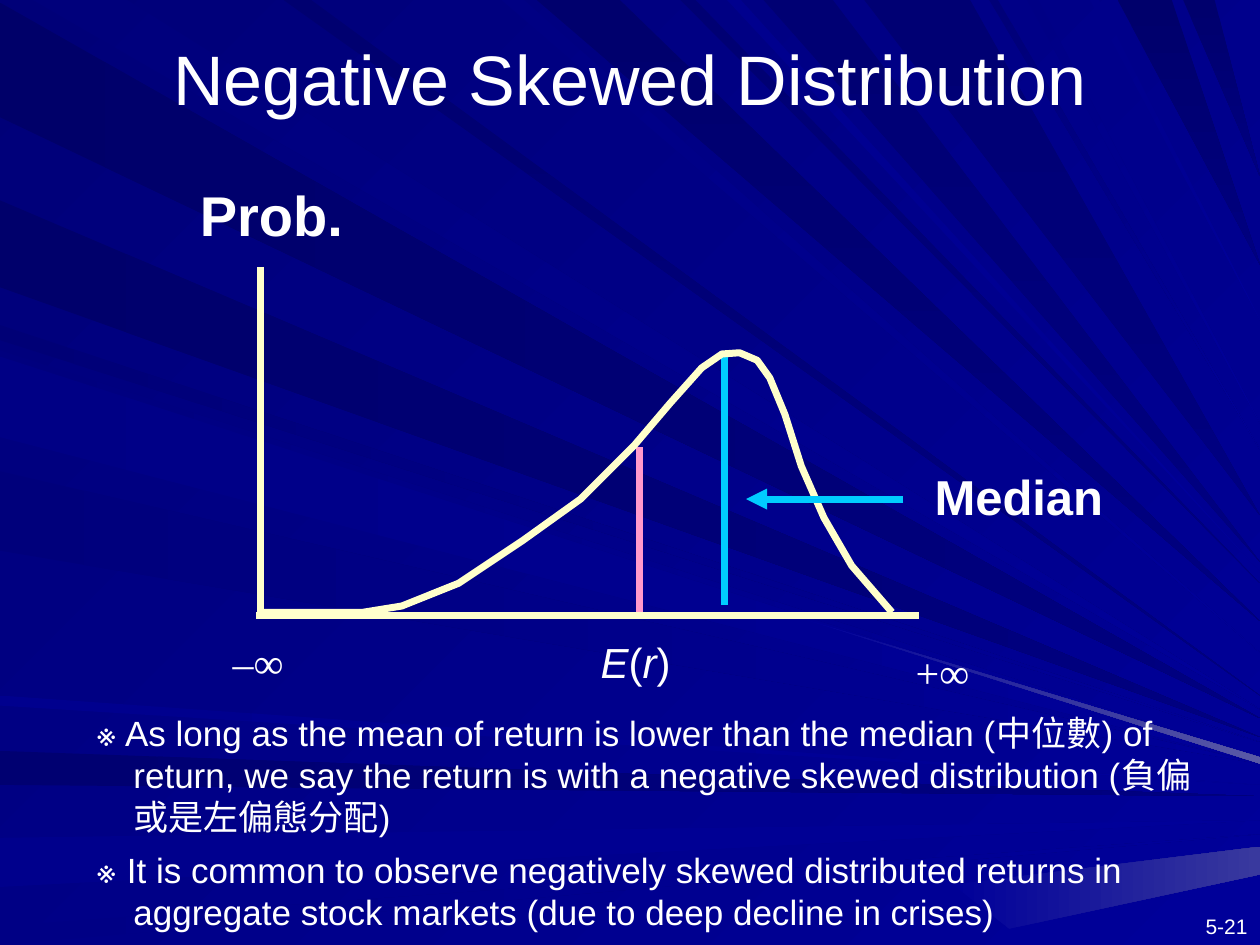
"""Build a slide that explains a negatively skewed return distribution."""
from lxml.etree import SubElement
from pptx import Presentation
from pptx.dml.color import RGBColor
from pptx.enum.shapes import MSO_CONNECTOR
from pptx.enum.text import MSO_ANCHOR, MSO_AUTO_SIZE, PP_ALIGN
from pptx.oxml.ns import qn
from pptx.util import Cm, Pt

WHITE = RGBColor(0xFF, 0xFF, 0xFF)
CREAM = RGBColor(0xFF, 0xFF, 0xCC)
CYAN = RGBColor(0x00, 0xCC, 0xFF)
PINK = RGBColor(0xFF, 0x99, 0xCC)
NIGHT = RGBColor(0x00, 0x00, 0x78)
BLUE = RGBColor(0x00, 0x00, 0x99)
NAVY = RGBColor(0x00, 0x00, 0x80)
GLOW = RGBColor(0x5A, 0x5A, 0xA6)
HAZE = RGBColor(0x39, 0x39, 0x9E)
UNIT = Cm(0.0254)
RIGHT_EDGE = 1000

LEFT_RAYS = [
    (2, 93, 570, "69"), (596, 623, 632, "71"), (665, 704, 651, "8C"),
    (735, 750, 662, "85"), (258, 270, 589, "76"), (159, 228, 585, "6B"),
    (278, 342, 602, "7E"), (374, 437, 606, "7B"), (552, 560, 623, "8E"),
    (283, 347, 606, "85"),
]
TOP_RAYS = [
    (26, 101, 563, "7B"), (398, 416, 518, "83"), (426, 492, 493, "6D"),
    (540, 552, 463, "73"), (606, 661, 446, "73"), (887, 930, 210, "6B"),
    (939, 964, 140, "6D"), (225, 247, 552, "70"), (577, 588, 454, "8E"),
    (686, 770, 409, "73"), (785, 792, 357, "78"), (815, 824, 336, "85"),
    (865, 872, 254, "8A"),
]
CURVE = [
    (708, 486), (676, 449), (654, 411), (636, 370), (623, 329), (611, 300),
    (601, 286), (587, 280), (573, 281), (557, 292), (532, 320), (503, 354),
    (461, 396), (415, 429), (364, 463), (319, 481), (288, 486), (208, 486),
]


def draw_outline(points, close):
    builder = page.shapes.build_freeform(*points[0], scale=UNIT)
    builder.add_line_segments(points[1:], close=close)
    shape = builder.convert_to_shape()
    shape.shadow.inherit = False
    return shape


def draw_line(color, *ends):
    line = page.shapes.add_connector(MSO_CONNECTOR.STRAIGHT, *[Cm(end) for end in ends])
    line.line.color.rgb = color
    line.line.width = Pt(4)
    SubElement(line._element.spPr, qn("a:effectLst"))
    return line


deck = Presentation()
deck.slide_width, deck.slide_height = Cm(25.4), Cm(19.05)
page = deck.slides.add_slide(deck.slide_layouts[5])
backdrop = page.background.fill
backdrop.gradient()
backdrop.gradient_angle = 315
for stop, color in zip(backdrop.gradient_stops, (NIGHT, BLUE)):
    stop.color.rgb = color

rays = []
for side, group in (("left", LEFT_RAYS), ("top", TOP_RAYS)):
    for start, end, tip, shade in group:
        corners = [(0, start), (0, end)] if side == "left" else [(start, 0), (end, 0)]
        dark = shade < "74"
        angle = 0 if side == "left" else 270 if dark else 315
        first = RGBColor.from_string("0000" + shade)
        rays.append((corners + [(RIGHT_EDGE, tip)], first, NAVY if dark else BLUE, angle))
rays.append(([(637, 491), (RIGHT_EDGE, 601), (RIGHT_EDGE, 606)], BLUE, GLOW, 0))
rays.append(([(756, 702), (RIGHT_EDGE, 672), (RIGHT_EDGE, 694), (801, 737)], BLUE, HAZE, 0))

for points, first, last, angle in rays:
    ray = draw_outline(points, True)
    ray.line.fill.background()
    ray.fill.gradient()
    ray.fill.gradient_angle = angle
    for stop, color in zip(ray.fill.gradient_stops, (first, last)):
        stop.color.rgb = color

title = page.shapes.title
title.element.getparent().append(title.element)
title.left, title.top, title.width, title.height = Cm(0), Cm(0.53), Cm(25.4), Cm(2.01)
title.text_frame.text = "Negative Skewed Distribution"
title.text_frame.auto_size = MSO_AUTO_SIZE.NONE
title.text_frame.vertical_anchor = MSO_ANCHOR.BOTTOM
heading = title.text_frame.paragraphs[0]
heading.alignment = PP_ALIGN.CENTER
heading.font.name, heading.font.size = "Arial", Pt(40)
heading.font.color.rgb = WHITE

draw_line(CYAN, 14.6, 7.11, 14.6, 12.19)
draw_line(PINK, 12.9, 9.02, 12.9, 12.4)
draw_line(CREAM, 18.52, 12.4, 5.16, 12.4)
draw_line(CREAM, 5.26, 5.38, 5.26, 12.4)
curve = draw_outline(CURVE, False)
curve.fill.background()
curve.line.color.rgb = CREAM
curve.line.width = Pt(4)
arrow = draw_line(CYAN, 18.21, 10.06, 15.04, 10.06)
SubElement(arrow.line._get_or_add_ln(), qn("a:tailEnd"), type="triangle")

NOTES = [
    "※ As long as the mean of return is lower than the median (中位數) of return, "
    "we say the return is with a negative skewed distribution (負偏或是左偏態分配)",
    "※ It is common to observe negatively skewed distributed returns in "
    "aggregate stock markets (due to deep decline in crises)",
]
LABELS = [
    ((22.66, 18.29, 2.74, 0.76), ["5-21"], {"size": Pt(12)}),
    ((11.86, 12.7, 1.93, 1.27), ["E(r)"], {"size": Pt(24)}),
    ((18.59, 9.27, 3.94, 1.45), ["Median"], {"size": Pt(28), "bold": True}),
    ((3.78, 3.51, 3.43, 1.63), ["Prob."], {"size": Pt(32), "bold": True}),
    ((1.7, 14.22, 22.66, 4.75), NOTES, {"size": Pt(20)}),
    ((4.44, 12.7, 1.55, 1.3), ["–∞"], {"size": Pt(24), "name": "Times New Roman"}),
    ((18.21, 12.9, 1.6, 1.3), ["+∞"], {"size": Pt(24), "name": "Times New Roman"}),
]
for place, texts, style in LABELS:
    box = page.shapes.add_textbox(*[Cm(value) for value in place])
    frame = box.text_frame
    frame.word_wrap = texts is NOTES or texts == ["5-21"]
    for index, text in enumerate(texts):
        para = frame.add_paragraph() if index else frame.paragraphs[0]
        if index:
            para.space_before = Pt(6)
        if texts is NOTES:
            properties = para._p.get_or_add_pPr()
            properties.set("marL", str(Cm(0.74)))
            properties.set("indent", str(-Cm(0.74)))
        if text == "5-21":
            para.alignment = PP_ALIGN.RIGHT
        for part in text if text == "E(r)" else [text]:
            span = para.add_run()
            span.text = part
            span.font.color.rgb = WHITE
            span.font.italic = text == "E(r)" and part.isalpha()
            for name, value in {"name": "Arial", **style}.items():
                setattr(span.font, name, value)

deck.save("out.pptx")
